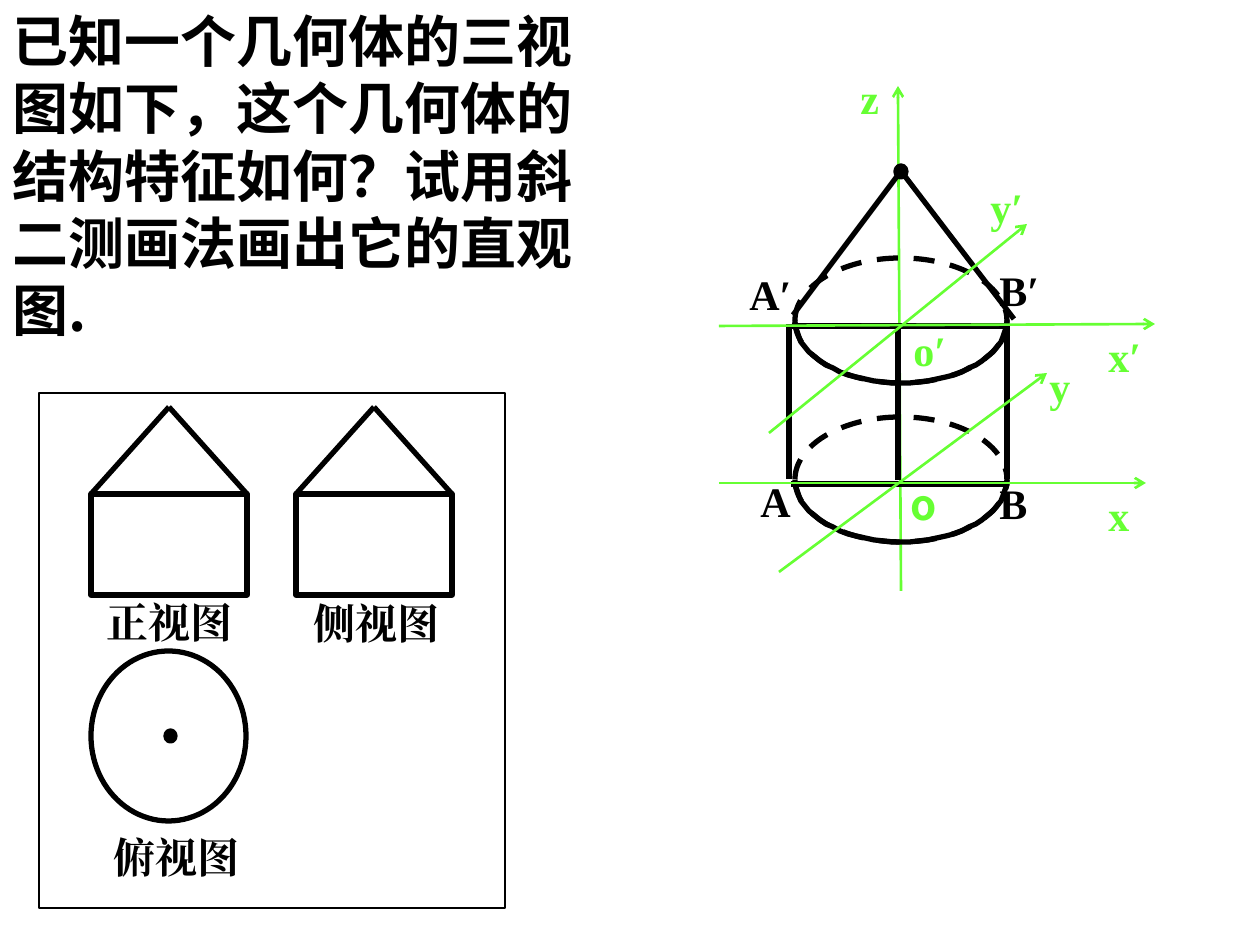
from math import cos, pi, sin

from lxml.etree import SubElement
from pptx import Presentation
from pptx.dml.color import RGBColor
from pptx.enum.dml import MSO_LINE as Dash
from pptx.enum.shapes import MSO_CONNECTOR as Link, MSO_SHAPE as Kind
from pptx.enum.text import MSO_AUTO_SIZE as Fit, PP_ALIGN as Align
from pptx.oxml.ns import qn
from pptx.util import Emu, Pt

BLACK = RGBColor(0, 0, 0)
GREEN = RGBColor(0x66, 0xFF, 0x33)
SERIF = "Times New Roman"
SANS = "Noto Sans CJK SC"
UNIT = 914400 / 126


def px(*nums):
    return [Emu(round(n * UNIT)) for n in nums]


class Pen:
    """Draws styled text, shapes and lines on one slide, in px."""

    def __init__(self, slide):
        self.shapes = slide.shapes
        self.thick = Pt(3)
        self.thin = Pt(1.5)

    def text(self, words, box, color=BLACK, font=SERIF, size=24):
        area = self.shapes.add_textbox(*px(*box))
        frame = area.text_frame
        frame.word_wrap = True
        frame.text = words
        para = frame.paragraphs[0]
        para.alignment = Align.JUSTIFY
        run = para.runs[0]
        run.font.name = font
        run.font.size = Pt(size)
        run.font.bold = True
        run.font.color.rgb = color
        SubElement(run.font._element, qn("a:ea")).set("typeface", font)
        return frame

    def shape(self, kind, box, width=None, full=False, dash=False):
        item = self.shapes.add_shape(kind, *px(*box))
        self.trim(item, width or self.thick)
        if full:
            item.fill.solid()
            item.fill.fore_color.rgb = BLACK
        if dash:
            item.line.dash_style = Dash.DASH

    def trim(self, item, width):
        item.shadow.inherit = False
        item.fill.background()
        item.line.color.rgb = BLACK
        item.line.width = width

    def line(self, *ends, color=BLACK, width=None):
        item = self.shapes.add_connector(Link.STRAIGHT, *px(*ends))
        item.line.color.rgb = color
        item.line.width = width or self.thick
        SubElement(item._element.spPr, qn("a:effectLst"))
        return item

    def axis(self, *ends):
        item = self.line(*ends, color=GREEN, width=self.thin)
        tail = SubElement(item.line._get_or_add_ln(), qn("a:tailEnd"))
        tail.set("type", "arrow")

    def trace(self, points):
        build = self.shapes.build_freeform(*points[0], scale=UNIT)
        build.add_line_segments(points[1:], close=False)
        self.trim(build.convert_to_shape(), self.thick)

    def disc(self, left, top, wide, high):
        self.shape(Kind.OVAL, (left, top, wide, high), dash=True)
        mid, base = left + wide / 2, top + high / 2
        turns = [pi * n / 36 for n in range(37)]
        self.trace([(round(mid - wide / 2 * cos(t)),
                     round(base + high / 2 * sin(t))) for t in turns])

    def house(self, left, top, wide, roof, wall):
        self.shape(Kind.RECTANGLE, (left, top + roof, wide, wall))
        for edge in (left, left + wide):
            self.line(left + wide // 2, top, edge, top + roof)


def views(pen):
    for words, left, top in (("侧视图", 301, 591), ("俯视图", 101, 825),
                             ("正视图", 94, 590)):
        pen.text(words, (left, top, 155, 80))
    pen.shape(Kind.RECTANGLE, (39, 393, 466, 515), pen.thin)
    for left in (91, 296):
        pen.house(left, 407, 156, 87, 101)
    pen.shape(Kind.OVAL, (91, 651, 155, 170), full=False)
    pen.shape(Kind.OVAL, (166, 731, 9, 10), full=True)


def solid(pen):
    pen.axis(901, 591, 898, 86)
    for ends in ((791, 484, 1004, 484), (792, 326, 1004, 326),
                 (898, 324, 898, 480), (789, 324, 789, 479),
                 (1007, 324, 1007, 479)):
        pen.line(*ends)
    for top in (417, 258):
        pen.disc(795, top, 212, 125)
    pen.shape(Kind.OVAL, (896, 166, 10, 11), full=True)
    for foot in ((793, 315), (1014, 319)):
        pen.trace([(901, 171), foot])
    for ends in ((719, 483, 1146, 483), (779, 572, 1047, 373),
                 (719, 326, 1155, 324), (769, 433, 1027, 224)):
        pen.axis(*ends)
    for words, left, top in (("A", 748, 469), ("B", 987, 471),
                             ("A′", 737, 262), ("B′", 987, 258)):
        pen.text(words, (left, top, 105, 93))
    for words, left, top in (("z", 848, 66), ("o′", 901, 318),
                             ("x", 1096, 483), ("y", 1037, 354),
                             ("x′", 1096, 324), ("y′", 978, 175)):
        pen.text(words, (left, top, 97, 59), GREEN)
    pen.text("o", (898, 472, 59, 59), GREEN, SANS)


def main():
    deck = Presentation()
    deck.slide_width, deck.slide_height = px(1260, 945)
    pen = Pen(deck.slides.add_slide(deck.slide_layouts[6]))
    views(pen)
    solid(pen)
    task = pen.text("已知一个几何体的三视图如下，这个几何体的结构特征如何？"
                    "试用斜二测画法画出它的直观图.",
                    (0, 0, 630, 351), font=SANS, size=32)
    task.auto_size = Fit.SHAPE_TO_FIT_TEXT
    task.paragraphs[0].alignment = Align.LEFT
    task.paragraphs[0].line_spacing = Pt(38.5)
    deck.save("out.pptx")


if __name__ == "__main__":
    main()
